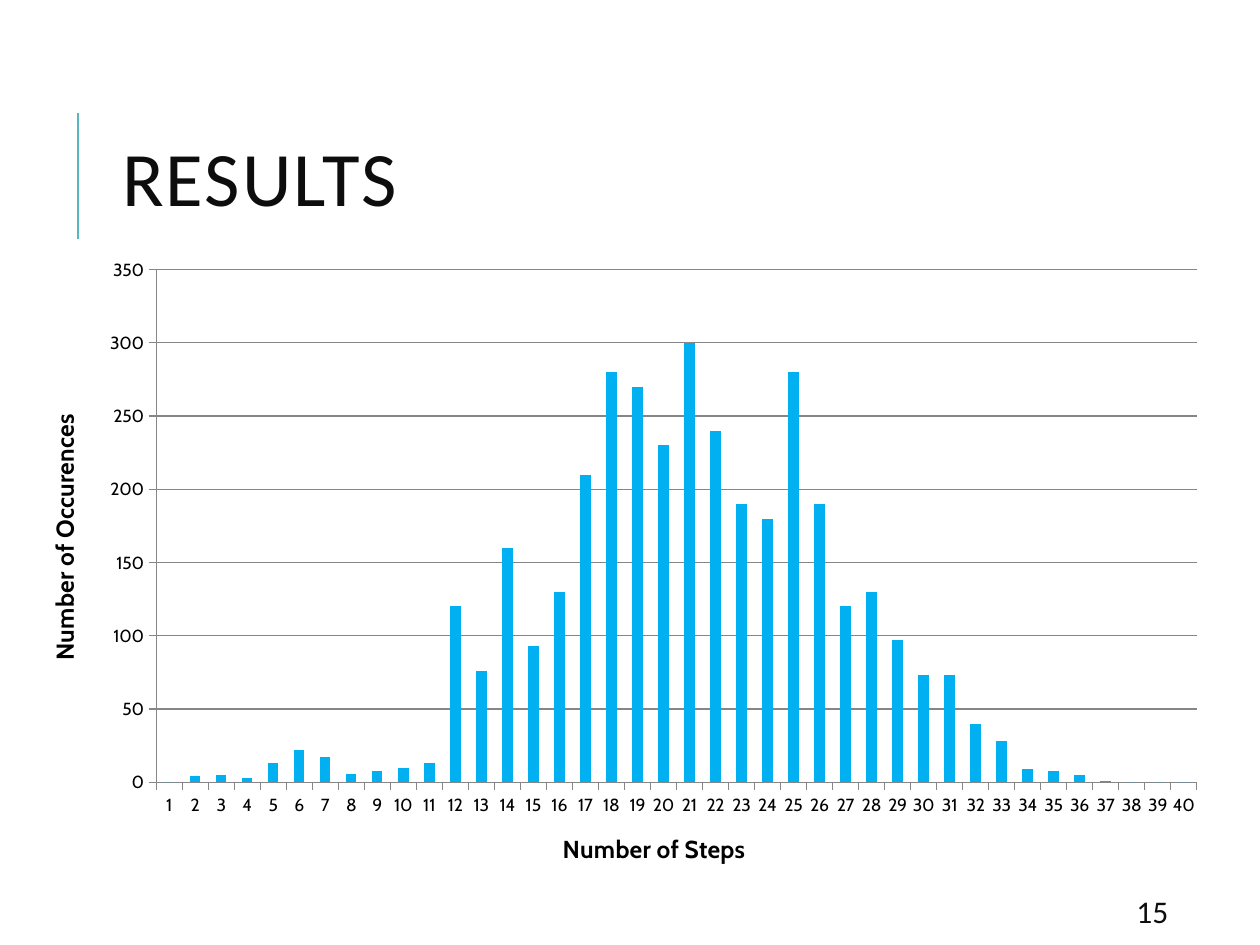
import pptx
import pptx.chart.data
import pptx.dml.color
import pptx.enum.chart
import pptx.enum.shapes
import pptx.enum.text
import pptx.oxml
import pptx.oxml.ns
import pptx.util
from pptx.util import Inches

THEME = {
    "accent": "58B6C0", "text": "0D0D0D", "bar": "00B0F0", "grid": "868686", "chart": "000000",
    "font": "Calibri", "chart_font": "Cabin",
    "title": 44, "number": 18, "axis_title": 14, "tick": 10,
}
TITLE = "RESULTS"
NUMBER = "15"
OCCURRENCES = [
    0, 4, 5, 3, 13, 22, 17, 6, 8, 10, 13, 120, 76, 160, 93, 130, 210, 280, 270, 230,
    300, 240, 190, 180, 280, 190, 120, 130, 97, 73, 73, 40, 28, 9, 8, 5, 1, 0, 0, 0,
]
CHART_BOX = (0.16, 1.95, 9.53, 5.15)
PLOT_BOX = (1.24, 2.14, 8.26, 4.07)
X_TITLE = ("Number of Steps", (4.43, 6.57))
Y_TITLE = ("Number of Occurences", (0.34, 3.25))


def color(name):
    return pptx.dml.color.RGBColor.from_string(THEME[name])


def style(font, size, fill, face, bold=False):
    font.size = pptx.util.Pt(THEME[size])
    font.name = THEME[face]
    font.color.rgb = color(fill)
    font.bold = bold


def add_text(s, box, text, size):
    tf = s.shapes.add_textbox(*map(Inches, box)).text_frame
    tf.word_wrap = True
    tf.vertical_anchor = pptx.enum.text.MSO_ANCHOR.MIDDLE
    tf.margin_left = tf.margin_right = Inches(0.13)
    tf.margin_top = tf.margin_bottom = Inches(0.07)
    p = tf.paragraphs[0]
    r = p.add_run()
    r.text = text
    style(r.font, size, "text", "font")
    return p, r


def place(parent, index, box):
    left, top, width, height = CHART_BOX
    values = [(box[0] - left) / width, (box[1] - top) / height]
    if len(box) == 4:
        values += [box[2] / width, box[3] / height]
    for old in parent.findall(pptx.oxml.ns.qn("c:layout")):
        parent.remove(old)
    target = '<c:layoutTarget val="inner"/>' if len(box) == 4 else ""
    modes = '<c:xMode val="edge"/><c:yMode val="edge"/>'
    sizes = "".join(f'<c:{k} val="{v:.4f}"/>' for k, v in zip("xywh", values))
    parent.insert(index, pptx.oxml.parse_xml(
        f'<c:layout {pptx.oxml.ns.nsdecls("c")}><c:manualLayout>'
        f'{target}{modes}{sizes}</c:manualLayout></c:layout>'))


def format_axis(axis, title, position):
    axis.major_tick_mark = pptx.enum.chart.XL_TICK_MARK.OUTSIDE
    axis.minor_tick_mark = pptx.enum.chart.XL_TICK_MARK.NONE
    axis.format.line.color.rgb = color("grid")
    axis.format.line.width = pptx.util.Pt(0.75)
    style(axis.tick_labels.font, "tick", "chart", "chart_font")
    r = axis.axis_title.text_frame.paragraphs[0].add_run()
    r.text = title
    style(r.font, "axis_title", "chart", "chart_font", True)
    place(axis.axis_title._element, 1, position)


def add_histogram(s):
    data = pptx.chart.data.CategoryChartData()
    data.categories = [str(n) for n in range(1, len(OCCURRENCES) + 1)]
    data.add_series("Series 1", OCCURRENCES)
    chart = s.shapes.add_chart(
        pptx.enum.chart.XL_CHART_TYPE.COLUMN_CLUSTERED, *map(Inches, CHART_BOX), data).chart
    chart.has_legend = chart.has_title = False
    style(chart.font, "tick", "chart", "chart_font")
    plot = chart.plots[0]
    plot.gap_width = 150
    plot.vary_by_categories = False
    fill = plot.series[0].format.fill
    fill.solid()
    fill.fore_color.rgb = color("bar")
    format_axis(chart.category_axis, *X_TITLE)
    axis = chart.value_axis
    format_axis(axis, *Y_TITLE)
    axis.minimum_scale, axis.maximum_scale, axis.major_unit = 0, 350, 50
    axis.has_major_gridlines = True
    line = axis.major_gridlines.format.line
    line.color.rgb = color("grid")
    line.width = pptx.util.Pt(0.75)
    place(chart._chartSpace.chart.plotArea, 0, PLOT_BOX)


def main():
    prs = pptx.Presentation()
    prs.slide_width, prs.slide_height = Inches(10), Inches(7.5)
    s = prs.slides.add_slide(prs.slide_layouts[6])
    rule = s.shapes.add_connector(
        pptx.enum.shapes.MSO_CONNECTOR.STRAIGHT, *map(Inches, (0.62, 1.9, 0.62, 0.9)))
    rule.line.color.rgb = color("accent")
    rule.line.width = pptx.util.Pt(1.5)
    rule._element.spPr.append(pptx.oxml.parse_xml(
        f'<a:effectLst {pptx.oxml.ns.nsdecls("a")}/>'))
    p, r = add_text(s, (0.84, 0.64, 7.97, 1.64), TITLE, "title")
    p.line_spacing = 0.8
    r.font._element.set("spc", "120")
    add_text(s, (8.89, 7.08, 0.8, 0.3), NUMBER, "number")
    add_histogram(s)
    prs.save("out.pptx")


if __name__ == "__main__":
    main()
